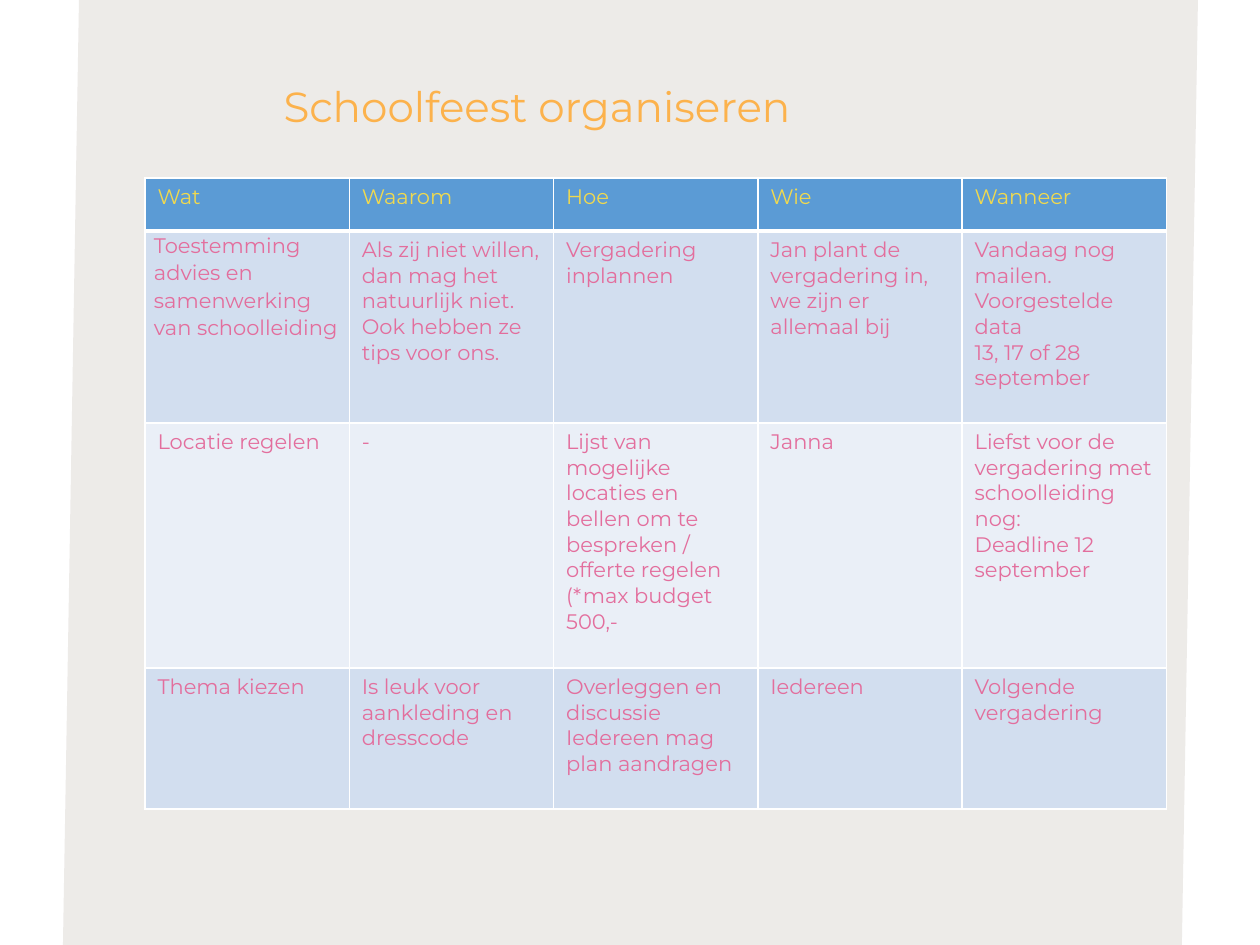
from lxml.etree import SubElement
from pptx import Presentation
from pptx.dml.color import RGBColor
from pptx.enum.shapes import MSO_SHAPE
from pptx.enum.text import MSO_ANCHOR, PP_ALIGN
from pptx.oxml.ns import qn
from pptx.util import Pt

PX = 914400 // 126
FONT = "Montserrat"
COLORS = {
    "panel": "EDEBE8", "title": "FCB24C",
    "header_fill": "5B9BD5", "header_text": "F0D94F",
    "odd_fill": "D2DEEF", "even_fill": "EAEFF7",
    "body_text": "E36E9D", "border": "FFFFFF",
}

TITLE = "Schoolfeest organiseren"
ROWS = [
    ["Wat", "Waarom", "Hoe", "Wie", "Wanneer"],
    ["Toestemming advies en samenwerking van schoolleiding",
     "Als zij niet willen, dan mag het natuurlijk niet. Ook hebben ze tips voor ons.",
     "Vergadering inplannen",
     "Jan plant de vergadering in, we zijn er allemaal bij",
     "Vandaag nog mailen.\nVoorgestelde data\n13, 17 of 28 september"],
    ["Locatie regelen",
     "-",
     "Lijst van mogelijke locaties en bellen om te bespreken / "
     "offerte regelen (*max budget 500,-",
     "Janna",
     "Liefst voor de vergadering met schoolleiding nog:\nDeadline 12 september"],
    ["Thema kiezen",
     "Is leuk voor aankleding en dresscode",
     "Overleggen en discussie\nIedereen mag plan aandragen",
     "Iedereen",
     "Volgende vergadering"],
]
ROW_HEIGHTS = [53, 192, 245, 141]
COLUMN_WIDTH = 204.3


def px(*lengths):
    return [round(length * PX) for length in lengths]


def rgb(name):
    return RGBColor.from_string(COLORS[name])


def format_text(text_frame, size, color):
    for paragraph in text_frame.paragraphs:
        paragraph.alignment = PP_ALIGN.LEFT
        for run in paragraph.runs:
            run.font.name = FONT
            run.font.size = Pt(size)
            run.font.bold = False
            run.font.color.rgb = rgb(color)


def set_borders(cell, bottom_width):
    """Draw the four cell borders; they must precede the fill in tcPr."""
    properties = cell._tc.get_or_add_tcPr()
    widths = {"a:lnL": 1, "a:lnR": 1, "a:lnT": 1, "a:lnB": bottom_width}
    for index, (tag, width) in enumerate(widths.items()):
        line = SubElement(properties, qn(tag), w=str(Pt(width)))
        fill = SubElement(line, qn("a:solidFill"))
        SubElement(fill, qn("a:srgbClr"), val=COLORS["border"])
        properties.insert(index, line)


def add_panel(slide):
    panel = slide.shapes.add_shape(MSO_SHAPE.PARALLELOGRAM, *px(63, 0, 1135, 945))
    panel.adjustments[0] = 0.017
    panel.shadow.inherit = False
    panel.fill.solid()
    panel.fill.fore_color.rgb = rgb("panel")
    panel.line.fill.background()
    slide.shapes._spTree.insert(2, panel._element)


def add_title(slide):
    title = slide.shapes.title
    title.left, title.top, title.width, title.height = px(271, 74, 772, 63)
    title.text_frame.text = TITLE
    title.text_frame.vertical_anchor = MSO_ANCHOR.TOP
    format_text(title.text_frame, 24, "title")


def add_plan(slide):
    column_count = len(ROWS[0])
    table = slide.shapes.add_table(
        len(ROWS), column_count,
        *px(145, 178, COLUMN_WIDTH * column_count, sum(ROW_HEIGHTS))).table
    for column in table.columns:
        column.width = px(COLUMN_WIDTH)[0]
    for row_index, texts in enumerate(ROWS):
        table.rows[row_index].height = px(ROW_HEIGHTS[row_index])[0]
        is_header = row_index == 0
        band = "header_fill" if is_header else "odd_fill" if row_index % 2 else "even_fill"
        for column_index, text in enumerate(texts):
            cell = table.cell(row_index, column_index)
            cell.text_frame.text = text
            format_text(cell.text_frame, 12, "header_text" if is_header else "body_text")
            cell.fill.solid()
            cell.fill.fore_color.rgb = rgb(band)
            set_borders(cell, 3 if is_header else 1)

    permission = table.cell(1, 0)
    permission.margin_left, permission.margin_right = px(9, 9)
    permission.margin_top = permission.margin_bottom = 0
    paragraph = permission.text_frame.paragraphs[0]
    paragraph.line_spacing = 1.07
    paragraph.space_after = Pt(8)


def main():
    presentation = Presentation()
    presentation.slide_width, presentation.slide_height = px(1260, 945)
    slide = presentation.slides.add_slide(presentation.slide_layouts[5])
    add_panel(slide)
    add_title(slide)
    add_plan(slide)
    presentation.save("out.pptx")


if __name__ == "__main__":
    main()
